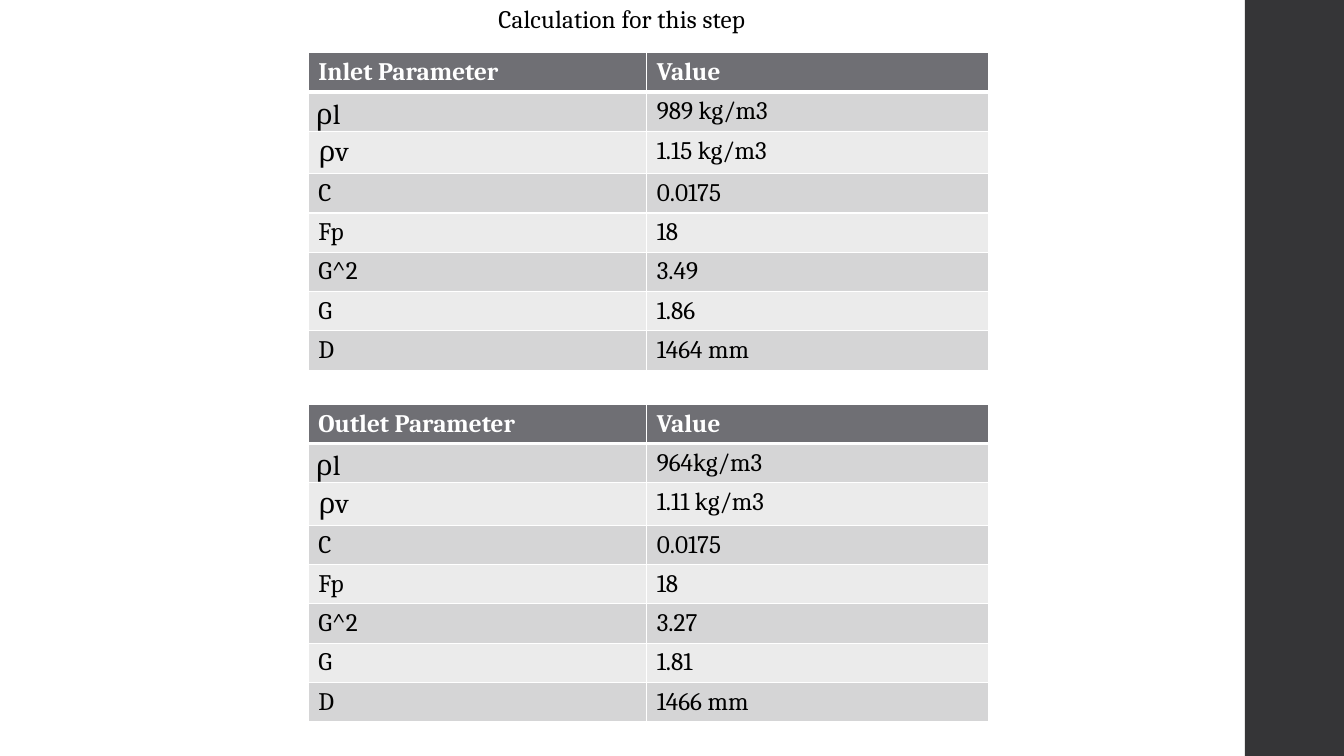
from dataclasses import dataclass

from lxml import etree
from pptx import Presentation
from pptx.dml.color import RGBColor
from pptx.enum.shapes import MSO_SHAPE
from pptx.enum.text import MSO_ANCHOR, MSO_AUTO_SIZE, PP_ALIGN
from pptx.oxml.ns import qn
from pptx.util import Cm, Pt

RECTANGLE = MSO_SHAPE.RECTANGLE
TOP, BOTTOM = MSO_ANCHOR.TOP, MSO_ANCHOR.BOTTOM
CENTER = PP_ALIGN.CENTER
NO_AUTOFIT = MSO_AUTO_SIZE.NONE

FONT = "Cambria"
WHITE, BLACK = "FFFFFF", "000000"
BAR, HEADER = "353537", "6F6F74"
BANDS = ("D5D5D6", "EBEBEB")
PAGE_WIDTH, PAGE_HEIGHT = 33.87, 19.05
BODY_WIDTH, BAR_WIDTH = 31.35, 2.54
TABLE_LEFT = 7.77
COLUMN_WIDTHS = (8.53, 8.61)
ROW_HEIGHTS = (0.97, 0.99, 1.05) + (0.99,) * 5


@dataclass
class ParameterTable:
    heading: str
    top: float
    values: tuple[str, ...]


SYMBOLS = (" ρl", "ρv", "C", "Fp", "G^2", "G", "D")
TABLES = (
    ParameterTable("Inlet Parameter", 1.33,
                   ("989 kg/m3", "1.15 kg/m3", "0.0175", "18", "3.49", "1.86", "1464 mm")),
    ParameterTable("Outlet Parameter", 10.19,
                   ("964kg/m3", "1.11 kg/m3", "0.0175", "18", "3.27", "1.81", "1466 mm")),
)


def color(value: str) -> RGBColor:
    return RGBColor.from_string(value)


def add_span(para, text: str, size: float, shade: str, bold: bool = False):
    span = para.add_run()
    span.text = text
    span.font.name = FONT
    span.font.size = Pt(size)
    span.font.bold = bold
    span.font.color.rgb = color(shade)
    return span


def add_borders(cell, top: float, bottom: float) -> None:
    properties = cell._tc.get_or_add_tcPr()
    widths = {"a:lnL": 1, "a:lnR": 1, "a:lnT": top, "a:lnB": bottom}
    for index, (tag, width) in enumerate(widths.items()):
        line = etree.Element(qn(tag), w=str(Pt(width)))
        fill = etree.SubElement(line, qn("a:solidFill"))
        etree.SubElement(fill, qn("a:srgbClr"), val=WHITE)
        properties.insert(index, line)


def add_parameter_table(page, item: ParameterTable) -> None:
    rows = [(item.heading, "Value"), *zip(SYMBOLS, item.values)]
    table = page.shapes.add_table(
        len(rows), len(COLUMN_WIDTHS), Cm(TABLE_LEFT), Cm(item.top),
        Cm(sum(COLUMN_WIDTHS)), Cm(sum(ROW_HEIGHTS))).table
    for column, width in zip(table.columns, COLUMN_WIDTHS):
        column.width = Cm(width)
    for row, height in zip(table.rows, ROW_HEIGHTS):
        row.height = Cm(height)

    for r, texts in enumerate(rows):
        header = r == 0
        for c, text in enumerate(texts):
            cell = table.cell(r, c)
            cell.fill.solid()
            cell.fill.fore_color.rgb = color(HEADER if header else BANDS[(r - 1) % 2])
            add_borders(cell, 3 if r == 1 else 1, 3 if header else 1)
            size = 20 if "ρ" in text else 18
            add_span(cell.text_frame.paragraphs[0], text, size,
                     WHITE if header else BLACK, header)

    # The liquid density symbol sits at the bottom of a tight cell
    density = table.cell(1, 0)
    density.vertical_anchor = BOTTOM
    density.margin_left = density.margin_right = density.margin_top = Cm(0.03)
    density.margin_bottom = 0


def add_title(page, text: str) -> None:
    title = page.shapes.title
    title.left, title.top = 0, 0
    title.width, title.height = Cm(BODY_WIDTH), Cm(PAGE_HEIGHT)
    frame = title.text_frame
    frame.word_wrap = True
    frame.auto_size = NO_AUTOFIT
    frame.vertical_anchor = TOP
    para = frame.paragraphs[0]
    para.alignment = CENTER
    para.line_spacing = 0.95
    para.space_before, para.space_after = Pt(14), Pt(2)
    span = add_span(para, text, 18, BLACK)
    span.font._element.set("spc", "10")


def add_side_bar(page) -> None:
    bar = page.shapes.add_shape(RECTANGLE, Cm(BODY_WIDTH + 0.02), 0,
                                Cm(BAR_WIDTH), Cm(PAGE_HEIGHT))
    bar.shadow.inherit = False
    bar.fill.solid()
    bar.fill.fore_color.rgb = color(BAR)
    bar.line.fill.background()


def main() -> None:
    deck = Presentation()
    deck.slide_width, deck.slide_height = Cm(PAGE_WIDTH), Cm(PAGE_HEIGHT)
    page = deck.slides.add_slide(deck.slide_layouts[5])
    page.background.fill.solid()
    page.background.fill.fore_color.rgb = color(WHITE)

    # Frame of the page
    add_side_bar(page)
    add_title(page, "Calculation for this step")

    # Inlet and outlet parameters
    for item in TABLES:
        add_parameter_table(page, item)

    deck.save("out.pptx")


if __name__ == "__main__":
    main()
